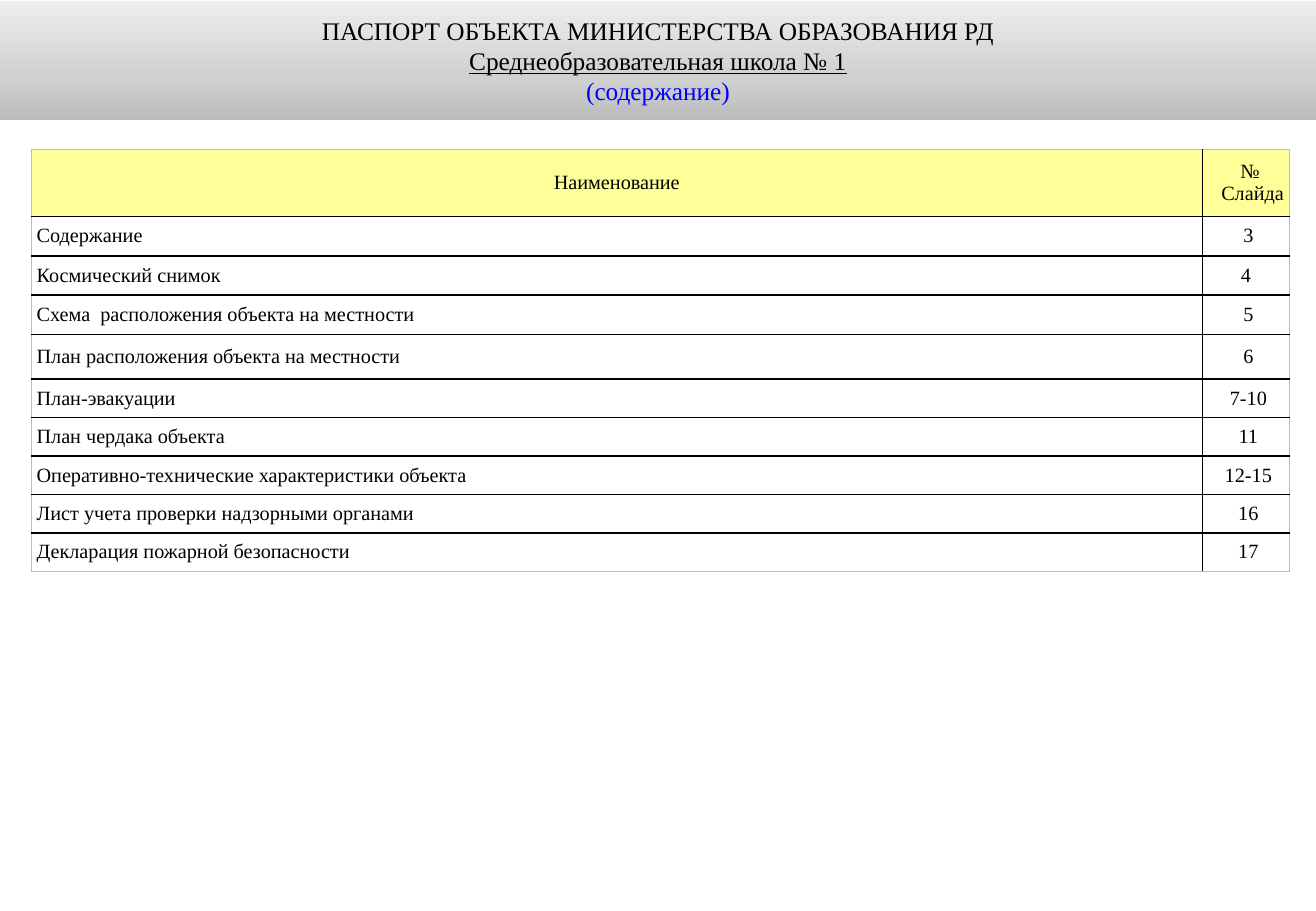
from copy import deepcopy
from pptx import Presentation
from pptx.dml.color import RGBColor as RGB
from pptx.enum.text import MSO_ANCHOR as Anchor, MSO_AUTO_SIZE as Fit, PP_ALIGN as Align
from pptx.oxml.ns import qn
from pptx.oxml.xmlchemy import OxmlElement as Node
from pptx.util import Pt

HUES = {"ink": "000000", "blue": "0000FF", "head": "FFFF99", "edge": "BCBCBC",
        "low": "BCBCBC", "mid": "D0D0D0", "high": "EDEDED"}

TITLE = [("ПАСПОРТ ОБЪЕКТА МИНИСТЕРСТВА ОБРАЗОВАНИЯ РД", "ink", False),
         ("Среднеобразовательная школа № 1", "ink", True),
         ("(содержание)", "blue", False)]

ROWS = [(39.7, ["Наименование"], ["№ ", "Слайда"]),
        (23.4, ["Содержание"], [" 3"]),
        (23.1, ["Космический снимок"], ["4"]),
        (23.4, ["Схема  расположения объекта на местности"], [" 5"]),
        (26.4, ["План расположения объекта на местности"], [" 6"]),
        (23.1, ["План-эвакуации"], [" 7-10"]),
        (22.8, ["План чердака объекта"], [" 11"]),
        (22.8, ["Оперативно-технические характеристики объекта"], [" 12-15"]),
        (22.8, ["Лист учета проверки надзорными органами"], [" 16"]),
        (22.5, ["Декларация пожарной безопасности"], [" 17"])]


class Deck:
    font = "Times New Roman"

    def __init__(self, wide, high):
        self.file = Presentation()
        self.file.slide_width, self.file.slide_height = Pt(wide), Pt(high)
        self.slide = self.file.slides.add_slide(self.file.slide_layouts[5])

    def text(self, frame, lines, size, align, indent=0):
        for i, (words, hue, under) in enumerate(lines):
            para = frame.paragraphs[0] if i == 0 else frame.add_paragraph()
            para.alignment = align
            if indent:
                para._p.get_or_add_pPr().set("marL", str(Pt(indent)))
            run = para.add_run()
            run.text = words
            run.font.name, run.font.size = self.font, Pt(size)
            run.font.underline = under
            run.font.color.rgb = RGB.from_string(HUES[hue])

    def title(self, box, lines, stops):
        shape = self.slide.shapes.title
        shape.left, shape.top, shape.width, shape.height = map(Pt, box)
        shape.fill.gradient()
        shape.fill.gradient_angle = 90
        group = next(shape.element.iter(qn("a:gsLst")))
        group.append(deepcopy(group[0]))
        for stop, (hue, place) in zip(shape.fill.gradient_stops, stops):
            stop.color.rgb = RGB.from_string(HUES[hue])
            stop.position = place
        frame = shape.text_frame
        frame.auto_size, frame.word_wrap = Fit.NONE, True
        frame.vertical_anchor = Anchor.MIDDLE
        self.text(frame, lines, 15, Align.CENTER)

    def border(self, cell, side, hue, width):
        line = Node("a:" + side)
        line.set("w", str(Pt(width)))
        fill, tint = Node("a:solidFill"), Node("a:srgbClr")
        tint.set("val", HUES[hue])
        fill.append(tint)
        line.append(fill)
        cell._tc.get_or_add_tcPr().append(line)

    def table(self, left, top, cols, rows):
        high = sum(row[0] for row in rows)
        table = self.slide.shapes.add_table(
            len(rows), len(cols), Pt(left), Pt(top), Pt(sum(cols)), Pt(high)).table
        table.first_row = table.horz_banding = False
        for col, width in zip(table.columns, cols):
            col.width = Pt(width)
        for r, (height, *texts) in enumerate(rows):
            table.rows[r].height = Pt(height)
            for c, parts in enumerate(texts):
                cell = table.cell(r, c)
                cell.margin_left = cell.margin_right = 0
                cell.margin_top = cell.margin_bottom = 0
                cell.vertical_anchor = Anchor.MIDDLE
                outer = {"lnL": c == 0, "lnR": c == len(cols) - 1,
                         "lnT": r == 0, "lnB": r == len(rows) - 1}
                for side, edge in outer.items():
                    self.border(cell, side, *(("edge", 0.5) if edge else ("ink", 1)))
                if r == 0:
                    cell.fill.solid()
                    cell.fill.fore_color.rgb = RGB.from_string(HUES["head"])
                else:
                    cell.fill.background()
                align = Align.LEFT if r and c == 0 else Align.CENTER
                indent = 3 if r and c == 0 else 8 if r == 0 and c else 0
                lines = [(part, "ink", False) for part in parts]
                self.text(cell.text_frame, lines, 12, align, indent)


def main():
    deck = Deck(780, 540)
    deck.title((0, 0.6, 780, 70.4), TITLE, [("low", 0), ("mid", 0.35), ("high", 1)])
    deck.table(18.7, 88.6, (693.9, 51.7), ROWS)
    deck.file.save("out.pptx")


if __name__ == "__main__":
    main()
